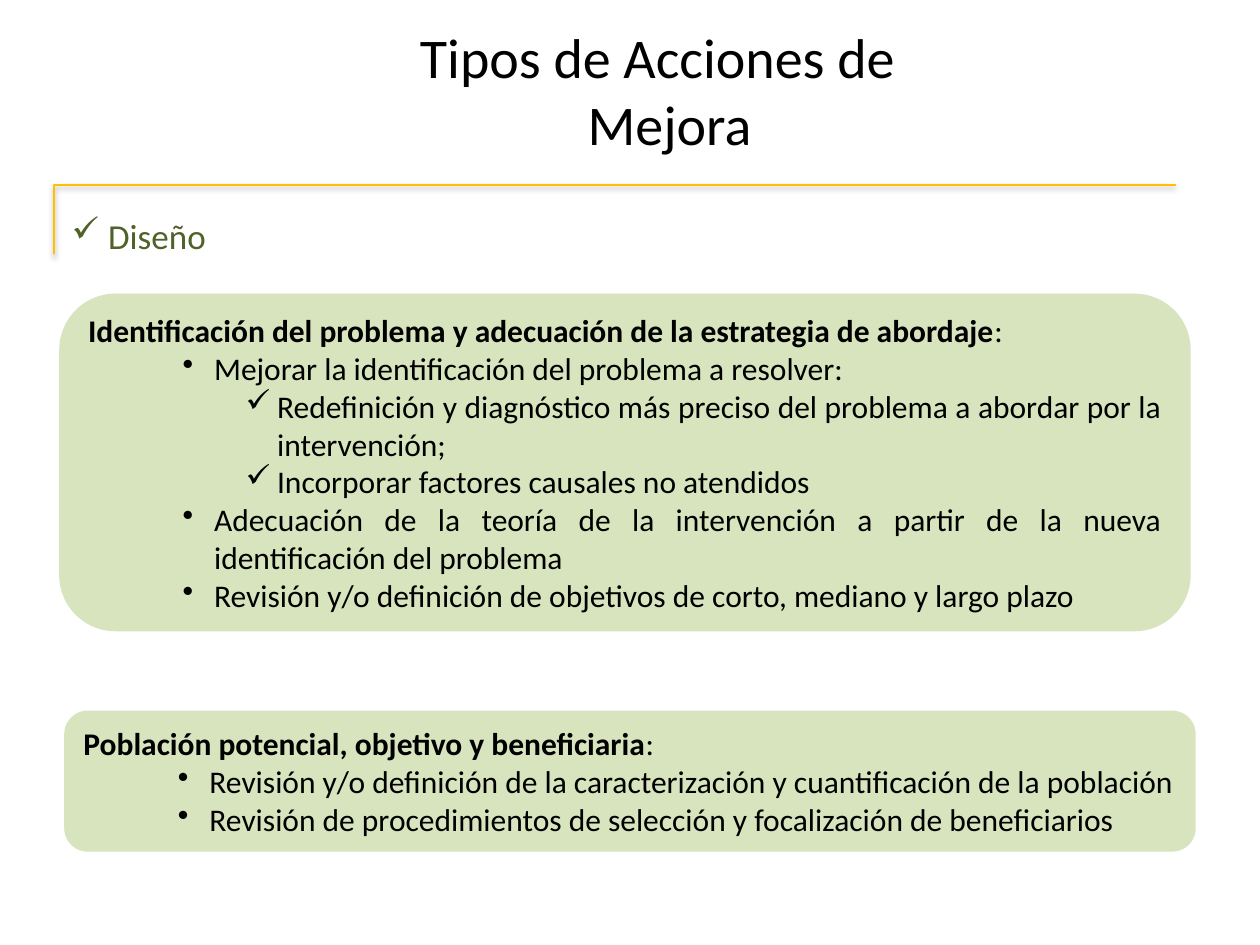
from dataclasses import dataclass

from lxml import etree
from pptx import Presentation
from pptx.dml.color import RGBColor
from pptx.enum.shapes import MSO_SHAPE
from pptx.enum.text import MSO_ANCHOR, PP_ALIGN
from pptx.oxml.ns import qn
from pptx.util import Inches, Pt

ROUNDED = MSO_SHAPE.ROUNDED_RECTANGLE
MIDDLE = MSO_ANCHOR.MIDDLE
CENTER, JUSTIFY = PP_ALIGN.CENTER, PP_ALIGN.JUSTIFY

# The slide is a grid of 100 columns by 100 rows
W, H = Inches(10), Inches(7.5)
FONT = "Calibri"
COLORS = {"text": "000000", "topic": "4F6228", "panel": "D7E4BD",
          "rule": "FFC000", "shadow": "000000"}
HANG = 0.25  # inches between a bullet and its text
BULLETS = {1: "•", 2: "✓"}
INDENTS = {1: 1.0, 2: 1.5}


@dataclass(frozen=True)
class Area:
    col: float
    row: float
    cols: float
    rows: float

    def box(self) -> tuple[int, int, int, int]:
        return x(self.col), y(self.row), x(self.cols), y(self.rows)


@dataclass(frozen=True)
class Panel:
    area: Area
    heading: str
    items: tuple[tuple[int, str], ...]  # level, text


def x(cols: float) -> int:
    return round(W * cols / 100)


def y(rows: float) -> int:
    return round(H * rows / 100)


def rgb(name: str) -> RGBColor:
    return RGBColor.from_string(COLORS[name])


def add_text(p, text: str, *, size: float = 18, color: str = "text",
             bold: bool = False, align=JUSTIFY, left: float = 0,
             hang: float = 0, bullet: str = "", after: float = 0) -> None:
    """Append a run to a paragraph and set the paragraph's format."""
    p.alignment, p.space_after = align, Pt(after)
    pPr = p._p.get_or_add_pPr()
    pPr.set("marL", str(Inches(left)))
    pPr.set("indent", str(-Inches(hang)))
    if bullet:
        etree.SubElement(pPr, qn("a:buChar"), char=bullet)
    r = p.add_run()
    r.text = text
    r.font.name, r.font.size, r.font.bold = FONT, Pt(size), bold
    r.font.color.rgb = rgb(color)


def add_label(s, area: Area, text: str, **fmt) -> None:
    tf = s.shapes.add_textbox(*area.box()).text_frame
    tf.word_wrap = True
    add_text(tf.paragraphs[0], text, left=0.29, hang=0.29, after=6, **fmt)


def add_panel(s, panel: Panel) -> None:
    sp = s.shapes.add_shape(ROUNDED, *panel.area.box())
    sp.shadow.inherit = False
    sp.fill.solid()
    sp.fill.fore_color.rgb = rgb("panel")
    sp.line.fill.background()
    tf = sp.text_frame
    tf.word_wrap, tf.vertical_anchor = True, MIDDLE
    p = tf.paragraphs[0]
    add_text(p, panel.heading, bold=True)
    add_text(p, ": ")
    for level, text in panel.items:
        p = tf.add_paragraph()
        p.level = level
        add_text(p, text, left=INDENTS[level], hang=HANG, bullet=BULLETS[level])


def add_rule(s, area: Area) -> None:
    """Draw the corner line under the title, with a soft shadow."""
    left, top, width, height = area.box()
    builder = s.shapes.build_freeform(left, top + height)
    builder.add_line_segments([(left, top), (left + width, top)], close=False)
    sp = builder.convert_to_shape()
    sp.fill.background()
    sp.line.color.rgb, sp.line.width = rgb("rule"), Pt(1)
    sp.shadow.inherit = False
    effects = sp._element.spPr.find(qn("a:effectLst"))
    shadow = etree.SubElement(effects, qn("a:outerShdw"), blurRad=str(Pt(3.1)),
                              dist=str(Pt(1.6)), dir="5400000", rotWithShape="0")
    color = etree.SubElement(shadow, qn("a:srgbClr"), val=COLORS["shadow"])
    etree.SubElement(color, qn("a:alpha"), val="38000")


RULE = Area(4.3, 19.6, 89, 7.33)
TOPIC = Area(4.7, 22, 93, 6)
TITLE = Area(27.2, 1.73, 50, 15.73)
PANELS = (
    Panel(Area(4.7, 31.07, 89.8, 35.73),
          "Identificación del problema y adecuación de la estrategia de abordaje",
          ((1, "Mejorar la identificación del problema a resolver:"),
           (2, "Redefinición y diagnóstico más preciso del problema a abordar "
               "por la intervención; "),
           (2, "Incorporar factores causales no atendidos "),
           (1, "Adecuación de la teoría de la intervención a partir de la nueva "
               "identificación del problema"),
           (1, "Revisión y/o definición de objetivos de corto, mediano y largo "
               "plazo"))),
    Panel(Area(5.1, 75.2, 89.8, 14.93),
          "Población potencial, objetivo y beneficiaria",
          ((1, "Revisión y/o definición de la caracterización y cuantificación "
               "de la población"),
           (1, "Revisión de procedimientos de selección y focalización de "
               "beneficiarios"))),
)


def main() -> None:
    prs = Presentation()
    prs.slide_width, prs.slide_height = W, H
    s = prs.slides.add_slide(prs.slide_layouts[6])

    # Title and topic around the corner line
    add_rule(s, RULE)
    add_label(s, TOPIC, "Diseño", size=20, color="topic", bullet="✓")
    add_label(s, TITLE, "Tipos de Acciones de Mejora ", size=32, align=CENTER)

    # Green panels
    for panel in PANELS:
        add_panel(s, panel)

    prs.save("out.pptx")


if __name__ == "__main__":
    main()
